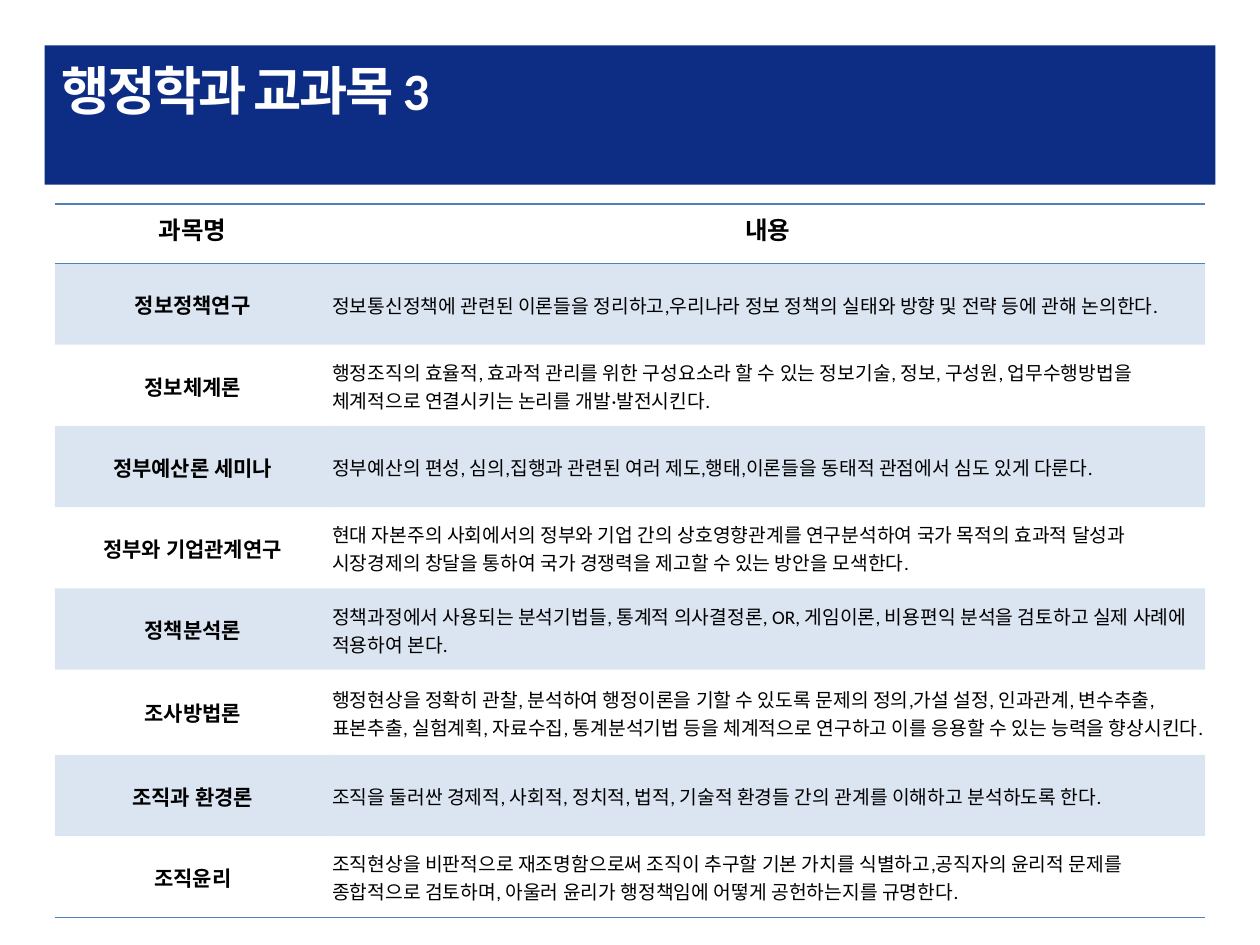
from lxml.etree import SubElement
from pptx import Presentation
from pptx.dml.color import RGBColor
from pptx.enum.shapes import MSO_SHAPE
from pptx.enum.text import MSO_ANCHOR, PP_ALIGN
from pptx.oxml.ns import qn
from pptx.util import Pt

FONT = "Calibri"
HEX = {"navy": "0D2D84", "blue": "4F81BD", "black": "000000", "white": "FFFFFF"}
TITLE = "행정학과 교과목 3"
HEAD = ("과목명", "내용")
ROWS = [
    ("정보정책연구", "정보통신정책에 관련된 이론들을 정리하고,우리나라 정보 정책의 실태와 방향 및 전략 등에 관해 논의한다."),
    ("정보체계론", "행정조직의 효율적, 효과적 관리를 위한 구성요소라 할 수 있는 정보기술, 정보, 구성원, 업무수행방법을 체계적으로 연결시키는 논리를 개발·발전시킨다."),
    ("정부예산론 세미나", "정부예산의 편성, 심의,집행과 관련된 여러 제도,행태,이론들을 동태적 관점에서 심도 있게 다룬다."),
    ("정부와 기업관계연구", "현대 자본주의 사회에서의 정부와 기업 간의 상호영향관계를 연구분석하여 국가 목적의 효과적 달성과 시장경제의 창달을 통하여 국가 경쟁력을 제고할 수 있는 방안을 모색한다."),
    ("정책분석론", "정책과정에서 사용되는 분석기법들, 통계적 의사결정론, OR, 게임이론, 비용편익 분석을 검토하고 실제 사례에 적용하여 본다."),
    ("조사방법론", "행정현상을 정확히 관찰, 분석하여 행정이론을 기할 수 있도록 문제의 정의,가설 설정, 인과관계, 변수추출, 표본추출, 실험계획, 자료수집, 통계분석기법 등을 체계적으로 연구하고 이를 응용할 수 있는 능력을 향상시킨다."),
    ("조직과 환경론", "조직을 둘러싼 경제적, 사회적, 정치적, 법적, 기술적 환경들 간의 관계를 이해하고 분석하도록 한다."),
    ("조직윤리", "조직현상을 비판적으로 재조명함으로써 조직이 추구할 기본 가치를 식별하고,공직자의 윤리적 문제를 종합적으로 검토하며, 아울러 윤리가 행정책임에 어떻게 공헌하는지를 규명한다."),
]
COLS = (157.7, 499.7)
HEAD_H, ROW_H = 33.8, 46.45
PLAIN = "{2D5ABB26-0587-4C30-8999-92F81FD0307C}"


def color(name):
    return RGBColor.from_string(HEX[name])


def style(para, size, bold, name, align):
    para.alignment = align
    for run in para.runs:
        font = run.font
        font.name, font.size, font.bold = FONT, Pt(size), bold
        font.color.rgb = color(name)


def rule(cell, side):
    line = SubElement(cell._tc.get_or_add_tcPr(), qn("a:" + side), w=str(Pt(1)))
    fill = SubElement(line, qn("a:solidFill"))
    SubElement(fill, qn("a:srgbClr"), val=HEX["blue"])


def tint(cell):
    cell.fill.solid()
    cell.fill.fore_color.rgb = color("blue")
    tone = cell._tc.tcPr.find(qn("a:solidFill")).find(qn("a:srgbClr"))
    SubElement(tone, qn("a:alpha"), val="20000")


def add_title(slide):
    box = slide.shapes.add_shape(MSO_SHAPE.RECTANGLE, Pt(25.5), Pt(26), Pt(669), Pt(79.5))
    box.shadow.inherit = False
    box.fill.solid()
    box.fill.fore_color.rgb = color("navy")
    box.line.fill.background()
    slide.shapes._spTree.insert(2, box._element)
    title = slide.shapes.title
    title.left, title.top, title.width, title.height = Pt(28.2), Pt(29.5), Pt(661), Pt(76)
    frame = title.text_frame
    frame.text = TITLE
    frame.vertical_anchor = MSO_ANCHOR.TOP
    para = frame.paragraphs[0]
    style(para, 30, True, "white", PP_ALIGN.LEFT)
    para.runs[0]._r.get_or_add_rPr().set("spc", "-150")


def add_grid(slide):
    data = [HEAD] + ROWS
    high = HEAD_H + ROW_H * len(ROWS)
    frame = slide.shapes.add_table(len(data), len(COLS), Pt(31.3), Pt(116.7), Pt(sum(COLS)), Pt(high))
    grid = frame.table
    grid.first_row = grid.horz_banding = False
    grid._tbl.tblPr.find(qn("a:tableStyleId")).text = PLAIN
    for col, wide in zip(grid.columns, COLS):
        col.width = Pt(wide)
    for i, texts in enumerate(data):
        grid.rows[i].height = Pt(ROW_H if i else HEAD_H)
        for j, text in enumerate(texts):
            cell = grid.cell(i, j)
            cell.text = text
            size = (11 if j else 12) if i else 14
            label = i == 0 or j == 0
            align = PP_ALIGN.CENTER if label else PP_ALIGN.LEFT
            style(cell.text_frame.paragraphs[0], size, label, "black", align)
            if i:
                cell.vertical_anchor = MSO_ANCHOR.MIDDLE
                cell.margin_left = cell.margin_right = cell.margin_top = Pt(0.75)
                cell.margin_bottom = 0
            else:
                rule(cell, "lnT")
            if i in (0, len(ROWS)):
                rule(cell, "lnB")
            if i % 2:
                tint(cell)
            else:
                cell.fill.background()


def main():
    """Build the course list slide."""
    deck = Presentation()
    deck.slide_width, deck.slide_height = Pt(720), Pt(540)
    slide = deck.slides.add_slide(deck.slide_layouts[5])
    add_title(slide)
    add_grid(slide)
    deck.save("out.pptx")


if __name__ == "__main__":
    main()
